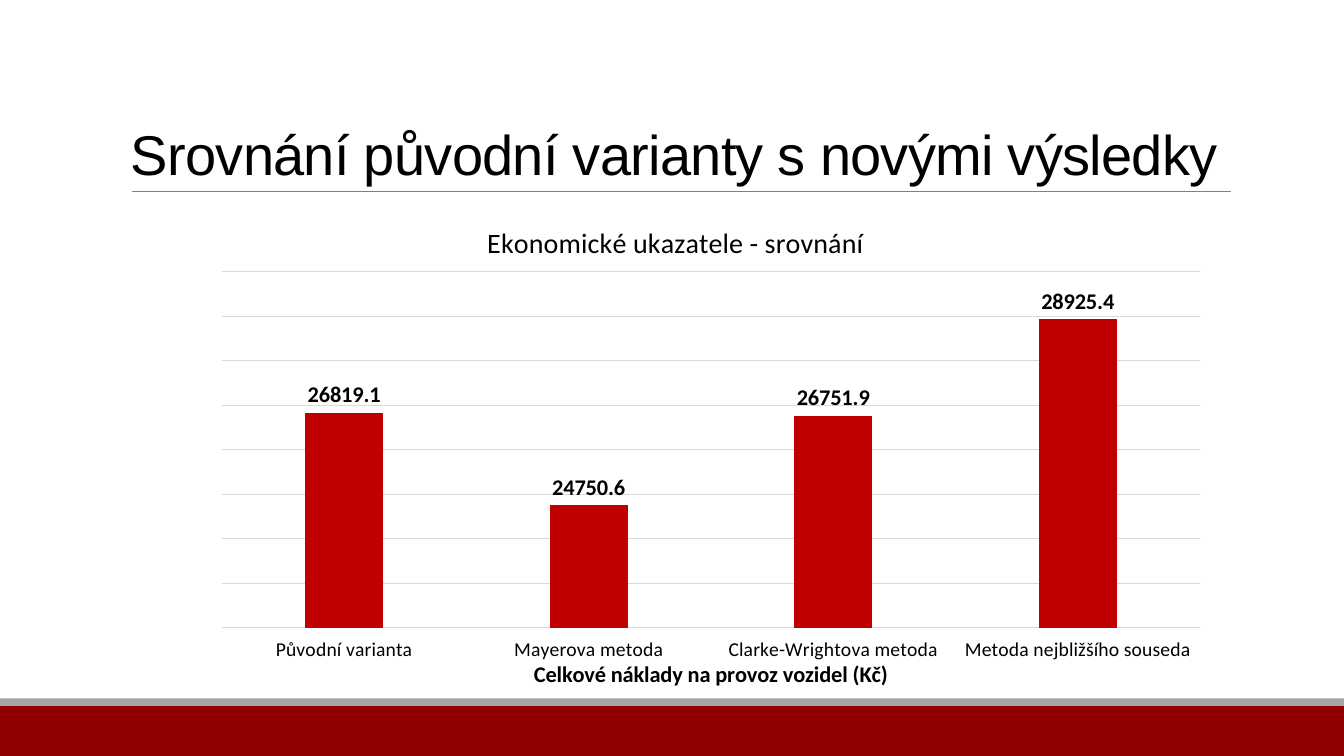
from lxml import etree
from pptx import Presentation
from pptx.chart.data import CategoryChartData
from pptx.dml.color import RGBColor
from pptx.enum.chart import XL_CHART_TYPE as ChartType, XL_LABEL_POSITION as LabelPos
from pptx.enum.chart import XL_TICK_LABEL_POSITION as TickLabelPos, XL_TICK_MARK as TickMark
from pptx.enum.shapes import MSO_CONNECTOR as Connector, MSO_SHAPE as Shape
from pptx.enum.text import MSO_ANCHOR as Anchor
from pptx.oxml.ns import qn
from pptx.util import Inches, Pt

BLACK = RGBColor(0x00, 0x00, 0x00)
DARK_RED = RGBColor(0x90, 0x00, 0x00)
BAR_RED = RGBColor(0xC0, 0x00, 0x00)
BAND_GRAY = RGBColor(0xA5, 0xA5, 0xA5)
RULE_GRAY = RGBColor(0x80, 0x80, 0x80)
GRID_GRAY = RGBColor(0xD9, 0xD9, 0xD9)

COSTS = {
    "Původní varianta": 26819.1,
    "Mayerova metoda": 24750.6,
    "Clarke-Wrightova metoda": 26751.9,
    "Metoda nejbližšího souseda": 28925.4,
}
PLOT_LAYOUT = {"x": 0.091, "y": 0.14, "w": 0.882, "h": 0.723}


def style_font(font, size, bold=False, name="Calibri"):
    font.name = name
    font.size = Pt(size)
    font.bold = bold
    font.color.rgb = BLACK


def style_line(line, color, width):
    line.color.rgb = color
    line.width = Pt(width)


def add_band(slide, top, height, color):
    sp = slide.shapes.add_shape(Shape.RECTANGLE, 0, Inches(top), Inches(13.33), Inches(height))
    sp.shadow.inherit = False
    sp.fill.solid()
    sp.fill.fore_color.rgb = color
    sp.line.fill.background()


def add_rule(slide, left, right, y):
    rule = slide.shapes.add_connector(
        Connector.STRAIGHT, Inches(left), Inches(y), Inches(right), Inches(y))
    style_line(rule.line, RULE_GRAY, 0.5)
    etree.SubElement(rule.element.spPr, qn("a:effectLst"))


def add_title(slide, text):
    tf = slide.shapes.add_textbox(Inches(1.2), Inches(0.31), Inches(11), Inches(1.59)).text_frame
    tf.word_wrap = True
    tf.vertical_anchor = Anchor.BOTTOM
    p = tf.paragraphs[0]
    p.line_spacing = 0.85
    r = p.add_run()
    r.text = text
    style_font(r.font, 40, name="Arial")
    r.font._element.set("spc", "-50")


def set_caption(owner, text, size, bold=False):
    """Give a chart or an axis its title."""
    r = owner.text_frame.paragraphs[0].add_run()
    r.text = text
    style_font(r.font, size, bold)


def set_plot_layout(chart):
    """Fix the inner plot area as fractions of the chart."""
    area = chart._chartSpace.chart.plotArea
    for old in area.findall(qn("c:layout")):
        area.remove(old)
    layout = etree.Element(qn("c:layout"))
    manual = etree.SubElement(layout, qn("c:manualLayout"))
    settings = {"layoutTarget": "inner", "xMode": "edge", "yMode": "edge", **PLOT_LAYOUT}
    for tag, value in settings.items():
        etree.SubElement(manual, qn(f"c:{tag}")).set("val", str(value))
    area.insert(0, layout)


def style_axes(chart):
    cat = chart.category_axis
    cat.major_tick_mark = cat.minor_tick_mark = TickMark.NONE
    cat.tick_label_position = TickLabelPos.LOW
    style_font(cat.tick_labels.font, 14)
    style_line(cat.format.line, GRID_GRAY, 0.75)
    set_caption(cat.axis_title, "Celkové náklady na provoz vozidel (Kč)", 16, bold=True)

    val = chart.value_axis
    val.minimum_scale, val.maximum_scale, val.major_unit = 22000, 30000, 1000
    val.has_major_gridlines = True
    style_line(val.major_gridlines.format.line, GRID_GRAY, 0.75)
    val.visible = False


def style_bars(plot):
    plot.gap_width = 219
    plot.overlap = -27
    plot.vary_by_categories = False
    series = plot.series[0]
    series.format.fill.solid()
    series.format.fill.fore_color.rgb = BAR_RED
    style_line(series.format.line, BAR_RED, 0.75)
    labels = series.data_labels
    labels.show_value = True
    labels.position = LabelPos.OUTSIDE_END
    style_font(labels.font, 16, bold=True)


def add_cost_chart(slide):
    data = CategoryChartData(number_format="General")
    data.categories = list(COSTS)
    data.add_series("Celkové náklady", list(COSTS.values()))
    chart = slide.shapes.add_chart(
        ChartType.COLUMN_CLUSTERED, Inches(1.2), Inches(2.01), Inches(11), Inches(4.89), data).chart
    style_font(chart.font, 10)
    chart.has_legend = False
    set_caption(chart.chart_title, "Ekonomické ukazatele - srovnání", 20)
    chart.chart_title.include_in_layout = False
    set_plot_layout(chart)
    style_axes(chart)
    style_bars(chart.plots[0])


def main():
    prs = Presentation()
    prs.slide_width, prs.slide_height = Inches(13.33), Inches(7.5)
    slide = prs.slides.add_slide(prs.slide_layouts[6])
    add_band(slide, 7, 0.5, DARK_RED)
    add_band(slide, 6.93, 0.07, BAND_GRAY)
    add_rule(slide, 1.31, 12.21, 1.9)
    add_title(slide, "Srovnání původní varianty s novými výsledky")
    add_cost_chart(slide)
    prs.save("out.pptx")


if __name__ == "__main__":
    main()
